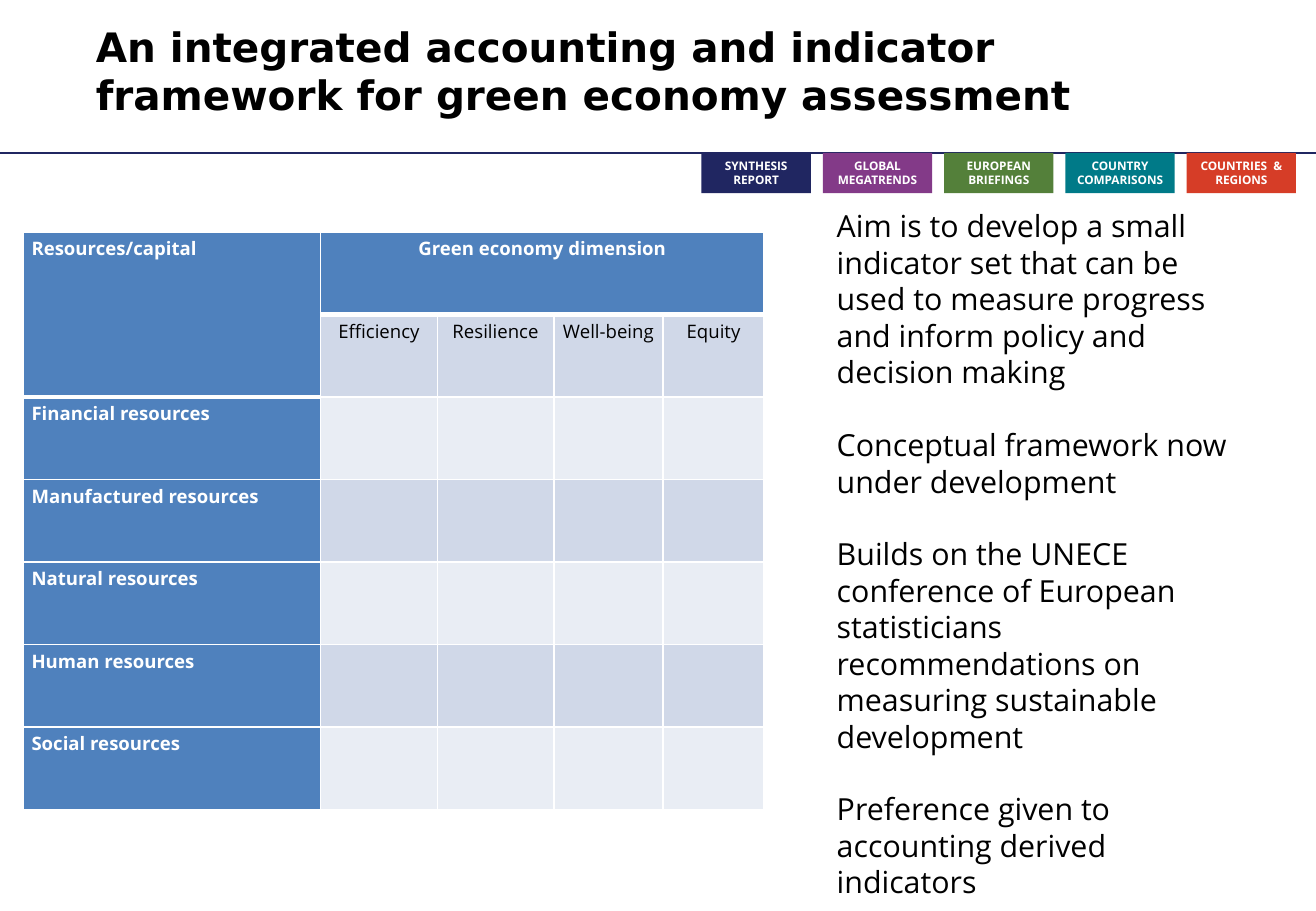
from lxml import etree
from pptx import Presentation
from pptx.dml.color import RGBColor
from pptx.enum.shapes import MSO_CONNECTOR, MSO_SHAPE
from pptx.enum.text import MSO_ANCHOR, PP_ALIGN
from pptx.oxml.ns import qn
from pptx.util import Pt

LEFT, CENTER, JUSTIFY = PP_ALIGN.LEFT, PP_ALIGN.CENTER, PP_ALIGN.JUSTIFY
MIDDLE, TOP = MSO_ANCHOR.MIDDLE, MSO_ANCHOR.TOP
RECT, STRAIGHT = MSO_SHAPE.RECTANGLE, MSO_CONNECTOR.STRAIGHT

W, H = 780, 540
COLORS = {
    "black": "000000", "white": "FFFFFF", "navy": "202661", "purple": "833A88",
    "green": "54803A", "teal": "007A88", "red": "D63D27",
    "header": "4F81BD", "band": "D0D8E8", "light": "E9EDF4",
}
TITLE = "An integrated accounting and indicator framework for green economy assessment"
TABS = [
    ("SYNTHESIS\nREPORT", "navy"),
    ("GLOBAL\nMEGATRENDS", "purple"),
    ("EUROPEAN\nBRIEFINGS", "green"),
    ("COUNTRY COMPARISONS", "teal"),
    ("COUNTRIES  & REGIONS", "red"),
]
DIMENSIONS = ["Efficiency", "Resilience", "Well-being", "Equity"]
RESOURCES = ["Financial", "Manufactured", "Natural", "Human", "Social"]
COL_WIDTHS = [176.4, 69.1, 69.1, 64.8, 59.8]
AIMS = [
    "Aim is to develop a small indicator set that can be used to measure "
    "progress and inform policy and decision making",
    "Conceptual framework now under development",
    "Builds on the UNECE conference of European statisticians "
    "recommendations on measuring sustainable development",
    "Preference given to accounting derived indicators",
]


def rgb(name):
    """Return the named colour."""
    return RGBColor.from_string(COLORS[name])


def write(tf, text, size=18, font="Open Sans", color="black", bold=False,
          align=LEFT, spacing=None, gap=0):
    """Fill a text frame, one paragraph per line of text."""
    for i, line in enumerate(text.split("\n")):
        p = tf.add_paragraph() if i else tf.paragraphs[0]
        p.alignment = align
        if spacing:
            p.line_spacing = spacing
        if i and gap:
            p.space_before = Pt(gap)
        r = p.add_run()
        r.text = line
        r.font.size, r.font.name, r.font.bold = Pt(size), font, bold
        r.font.color.rgb = rgb(color)


def text_block(s, x, y, w, h, text, **fmt):
    """Place a wrapping text box."""
    tf = s.shapes.add_textbox(Pt(x), Pt(y), Pt(w), Pt(h)).text_frame
    tf.word_wrap = True
    tf.vertical_anchor = TOP
    write(tf, text, **fmt)


def header_rule(s, x, y, w):
    """Draw the thin rule under the title."""
    rule = s.shapes.add_connector(STRAIGHT, Pt(x), Pt(y), Pt(x + w), Pt(y))
    rule.line.color.rgb = rgb("navy")
    rule.line.width = Pt(0.75)
    etree.SubElement(rule._element.spPr, qn("a:effectLst"))


def report_tabs(s, x, y, w, h, step):
    """Hang the coloured report tabs from the rule."""
    for i, (label, color) in enumerate(TABS):
        sp = s.shapes.add_shape(RECT, Pt(x + i * step), Pt(y), Pt(w), Pt(h))
        sp.shadow.inherit = False
        sp.fill.solid()
        sp.fill.fore_color.rgb = rgb(color)
        sp.line.fill.background()
        tf = sp.text_frame
        tf.word_wrap = True
        tf.vertical_anchor = MIDDLE
        tf.margin_left = tf.margin_right = tf.margin_top = tf.margin_bottom = Pt(2.88)
        write(tf, label, size=7, color="white", bold=True, align=CENTER)


def style_cell(cell, color, top=1, bottom=1):
    """Set margins, white borders and fill of a cell."""
    cell.margin_left = cell.margin_right = Pt(5)
    cell.margin_top = cell.margin_bottom = Pt(0)
    tc_pr = cell._tc.get_or_add_tcPr()
    for side, width in (("L", 1), ("R", 1), ("T", top), ("B", bottom)):
        ln = etree.SubElement(tc_pr, qn("a:ln" + side), w=str(Pt(width)))
        fill = etree.SubElement(ln, qn("a:solidFill"))
        etree.SubElement(fill, qn("a:srgbClr"), val=COLORS["white"])
    cell.fill.solid()
    cell.fill.fore_color.rgb = rgb(color)


def framework_table(s, x, y, row_height):
    """Build the grid of resources against green economy dimensions."""
    n_rows, n_cols = len(RESOURCES) + 2, len(COL_WIDTHS)
    table = s.shapes.add_table(n_rows, n_cols, Pt(x), Pt(y), Pt(sum(COL_WIDTHS)),
                               Pt(row_height * n_rows)).table
    for col, width in zip(table.columns, COL_WIDTHS):
        col.width = Pt(width)
    for i, row in enumerate(table.rows):
        row.height = Pt(row_height)
        for j, cell in enumerate(row.cells):
            head = i == 0 or j == 0
            last_head = 1 if j == 0 else 0
            style_cell(cell, "header" if head else "band" if i % 2 else "light",
                       top=3 if i == last_head + 1 else 1,
                       bottom=3 if i == last_head else 1)
    table.cell(0, 0).merge(table.cell(1, 0))
    table.cell(0, 1).merge(table.cell(0, n_cols - 1))

    labels = {(0, 0): "Resources/capital", (0, 1): "Green economy dimension"}
    labels.update({(1, j): name for j, name in enumerate(DIMENSIONS, 1)})
    labels.update({(i, 0): name + " resources" for i, name in enumerate(RESOURCES, 2)})
    for (i, j), label in labels.items():
        head = i == 0 or j == 0
        write(table.cell(i, j).text_frame, label, size=11, bold=head,
              color="white" if head else "black",
              align=CENTER if j else JUSTIFY, spacing=1.15)


def framework_slide(prs):
    """Compose the framework slide."""
    s = prs.slides.add_slide(prs.slide_layouts[6])
    header_rule(s, 0, 90.7, W)
    report_tabs(s, 415.8, 90.7, 64.8, 23.8, 71.9)
    text_block(s, 49.7, 9.4, 699, 65.5, TITLE, size=24, font="DejaVu Sans",
               bold=True, spacing=Pt(28.8))
    framework_table(s, 13.7, 137.5, 48.9)
    text_block(s, 488.9, 119.5, 261.4, 378, "\n".join(AIMS),
               spacing=Pt(21.6), gap=21.6)


def main():
    """Build and save the presentation."""
    prs = Presentation()
    prs.slide_width, prs.slide_height = Pt(W), Pt(H)
    framework_slide(prs)
    prs.save("out.pptx")


if __name__ == "__main__":
    main()
